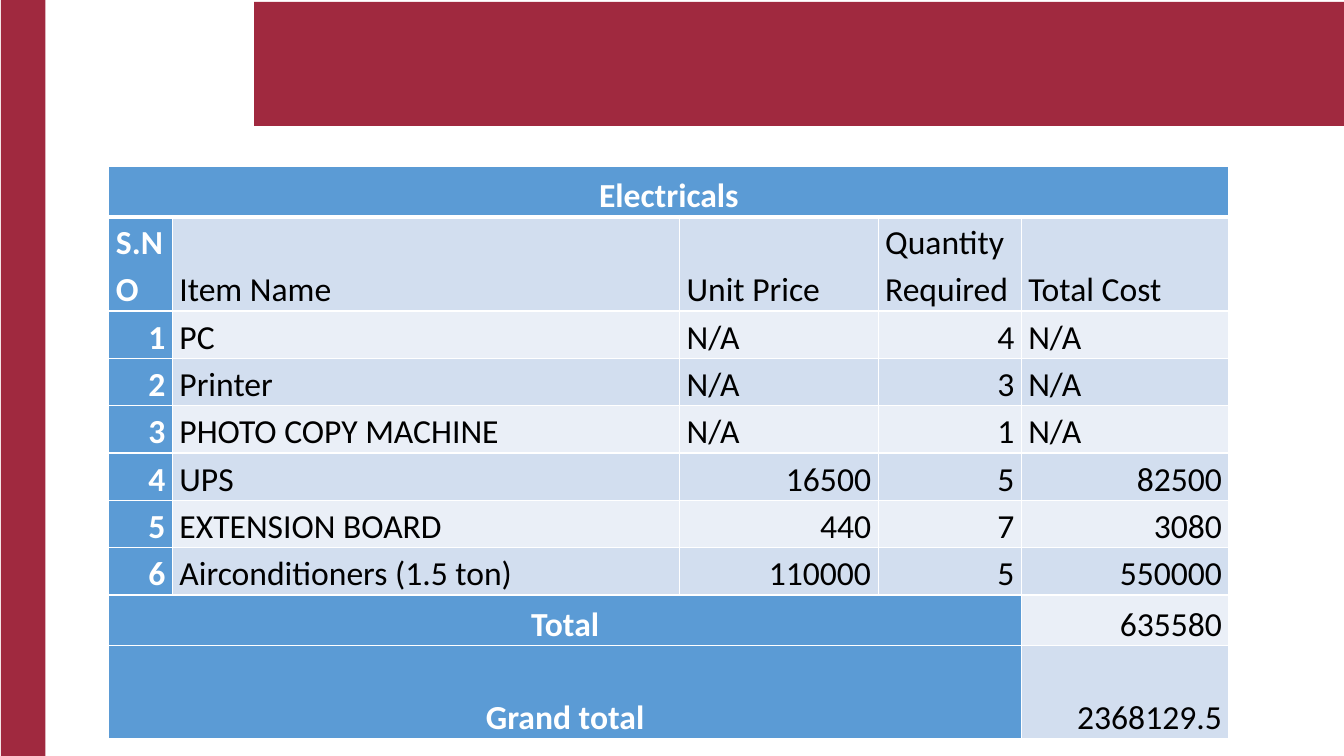
from lxml.etree import SubElement
from pptx import Presentation
from pptx.dml.color import RGBColor
from pptx.enum.shapes import MSO_SHAPE
from pptx.enum.text import MSO_ANCHOR, PP_ALIGN
from pptx.oxml.ns import qn
from pptx.util import Inches, Pt

CRIMSON = "A0293F"
BLUE = "5B9BD5"
BANDS = ("EAEFF7", "D2DEEF")
WHITE = "FFFFFF"
BLACK = "000000"

COLUMN_WIDTHS = (0.63, 5.03, 1.97, 1.42, 2.06)
ROW_HEIGHTS = (0.5, 0.92) + (0.47,) * 6 + (0.5, 0.92)
ROWS = (
    ("Electricals", "", "", "", ""),
    ("S.NO", "Item Name", "Unit Price", "Quantity Required", "Total Cost"),
    ("1", "PC", "N/A", "4", "N/A"),
    ("2", "Printer", "N/A", "3", "N/A"),
    ("3", "PHOTO COPY MACHINE", "N/A", "1", "N/A"),
    ("4", "UPS", "16500", "5", "82500"),
    ("5", "EXTENSION BOARD", "440", "7", "3080"),
    ("6", "Airconditioners (1.5 ton)", "110000", "5", "550000"),
    ("Total", "", "", "", "635580"),
    ("Grand total", "", "", "", "2368129.5"),
)
MERGED_TO = {0: 4, 8: 3, 9: 3}
MIDDLE_CELLS = ("PC", "16500", "440")


def color(hex_string):
    return RGBColor.from_string(hex_string)


def add_band(slide, left, top, width, height):
    band = slide.shapes.add_shape(
        MSO_SHAPE.RECTANGLE, Inches(left), Inches(top), Inches(width), Inches(height)
    )
    band.shadow.inherit = False
    band.fill.solid()
    band.fill.fore_color.rgb = color(CRIMSON)
    band.line.fill.background()


def add_borders(cell, row_index):
    properties = cell._tc.get_or_add_tcPr()
    widths = {
        "a:lnL": 1,
        "a:lnR": 1,
        "a:lnT": 3 if row_index == 1 else 1,
        "a:lnB": 3 if row_index == 0 else 1,
    }
    for tag, width in widths.items():
        line = SubElement(properties, qn(tag), w=str(Pt(width)))
        fill = SubElement(line, qn("a:solidFill"))
        SubElement(fill, qn("a:srgbClr"), val=WHITE)


def alignment_for(text, row_index, column_index):
    if row_index in MERGED_TO and column_index == 0:
        return PP_ALIGN.CENTER
    if text.replace(".", "").isdigit():
        return PP_ALIGN.RIGHT
    return PP_ALIGN.LEFT


def format_cell(cell, text, row_index, column_index):
    heading = row_index == 0 or column_index <= (
        MERGED_TO[row_index] if row_index in MERGED_TO else 0
    )
    add_borders(cell, row_index)
    cell.fill.solid()
    cell.fill.fore_color.rgb = color(BLUE if heading else BANDS[row_index % 2])
    cell.margin_left = cell.margin_right = Inches(0.07)
    cell.margin_top = cell.margin_bottom = 0
    middle = text in MIDDLE_CELLS
    cell.vertical_anchor = MSO_ANCHOR.MIDDLE if middle else MSO_ANCHOR.BOTTOM
    if not text:
        return
    cell.text_frame.text = text
    paragraph = cell.text_frame.paragraphs[0]
    paragraph.alignment = alignment_for(text, row_index, column_index)
    paragraph.line_spacing = 1.15
    font = paragraph.runs[0].font
    font.name = "Calibri"
    font.size = Pt(24)
    font.bold = heading
    font.color.rgb = color(WHITE if heading else BLACK)


def add_cost_table(slide, left, top):
    frame = slide.shapes.add_table(
        len(ROWS), len(COLUMN_WIDTHS), Inches(left), Inches(top),
        Inches(sum(COLUMN_WIDTHS)), Inches(sum(ROW_HEIGHTS)),
    )
    table = frame.table
    for column, width in zip(table.columns, COLUMN_WIDTHS):
        column.width = Inches(width)
    for row, height in zip(table.rows, ROW_HEIGHTS):
        row.height = Inches(height)
    for row_index, values in enumerate(ROWS):
        for column_index, text in enumerate(values):
            format_cell(table.cell(row_index, column_index), text, row_index, column_index)
    for row_index, last_column in MERGED_TO.items():
        table.cell(row_index, 0).merge(table.cell(row_index, last_column))


def main():
    presentation = Presentation()
    presentation.slide_width = Inches(13.33)
    presentation.slide_height = Inches(7.5)
    slide = presentation.slides.add_slide(presentation.slide_layouts[6])
    add_band(slide, 2.52, 0.02, 10.81, 1.23)
    add_band(slide, 0.01, 0, 0.44, 7.5)
    add_cost_table(slide, 1.08, 1.65)
    presentation.save("out.pptx")


if __name__ == "__main__":
    main()
